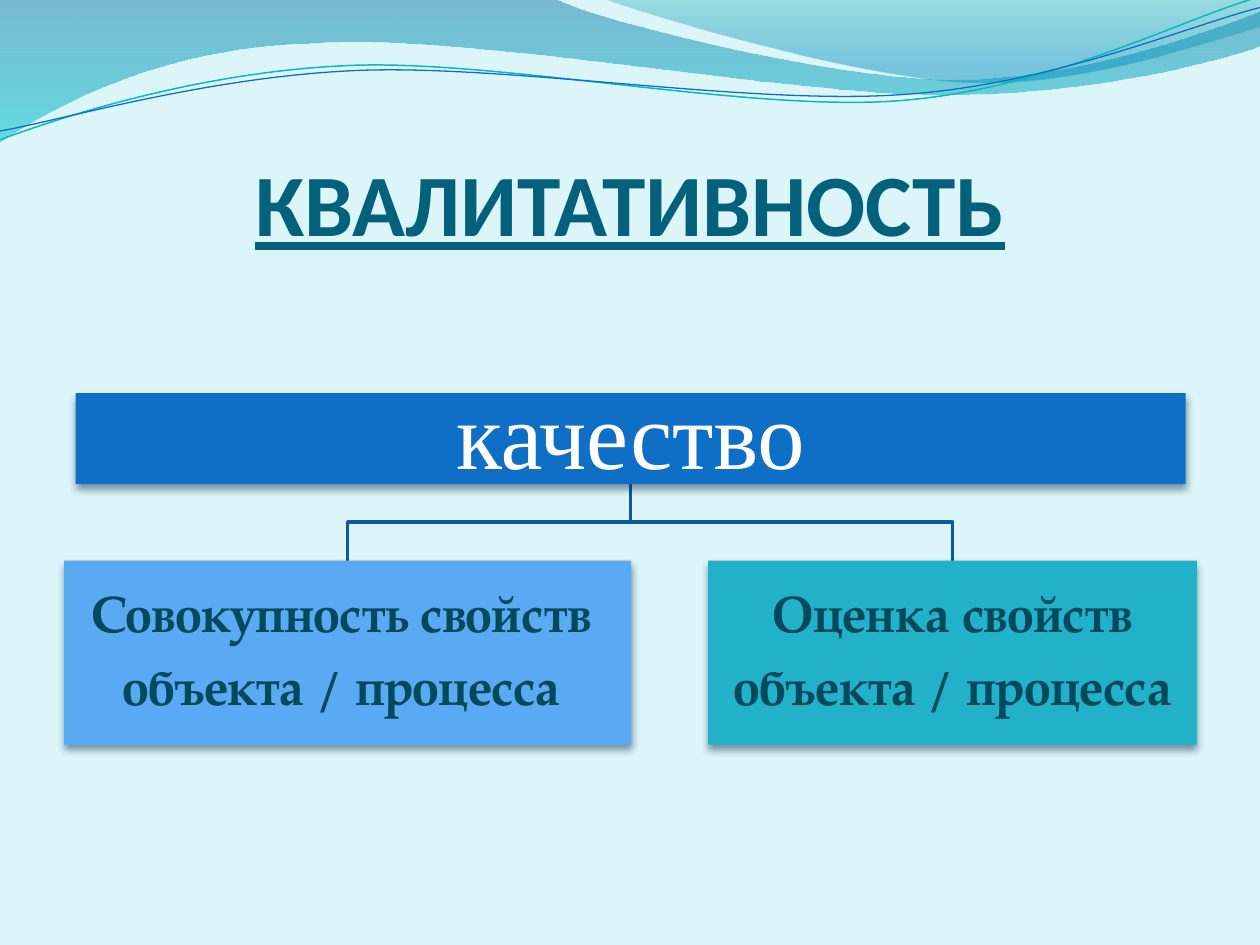
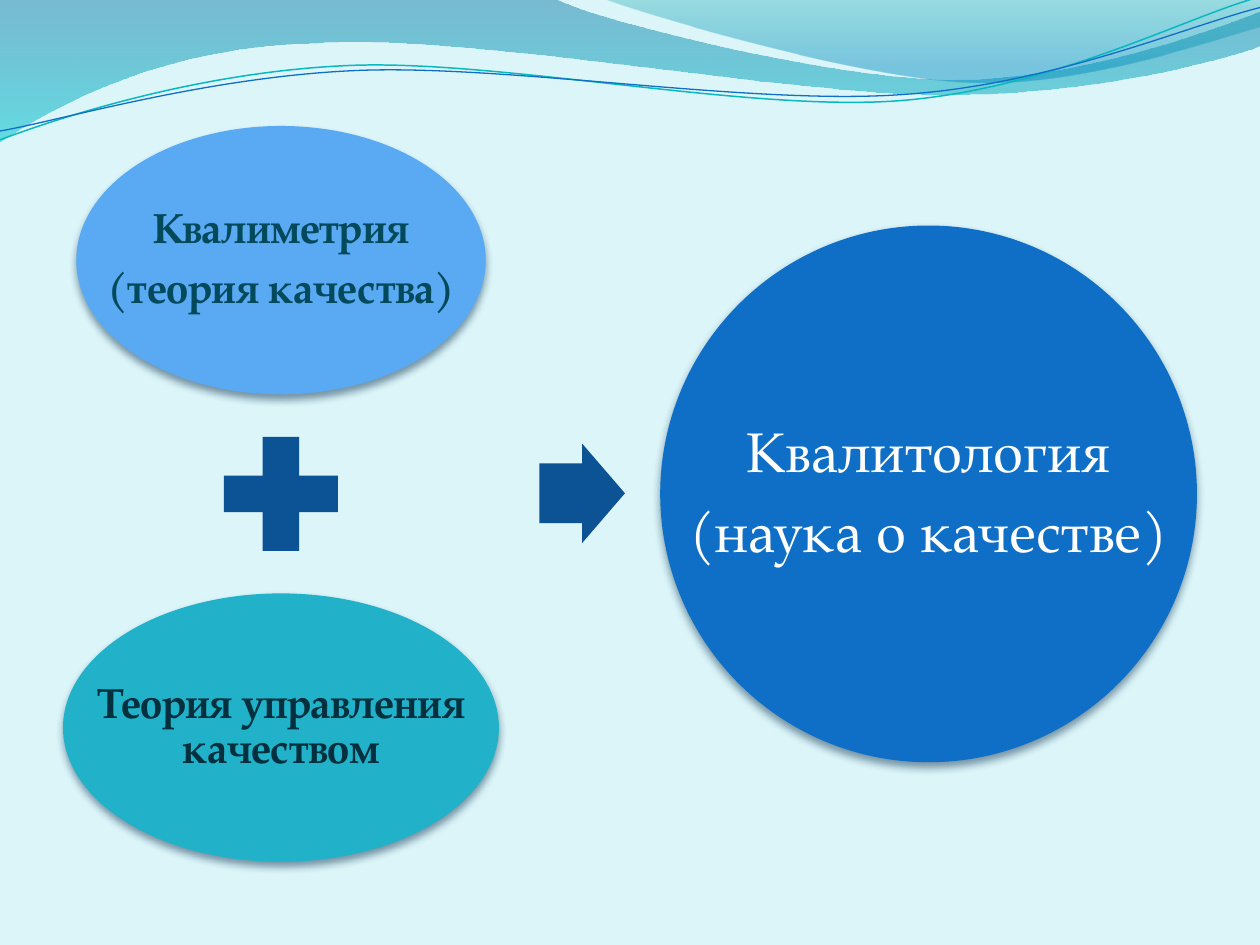
from math import cos, radians, sin

from lxml.etree import Element, SubElement
from pptx import Presentation
from pptx.dml.color import RGBColor
from pptx.enum.shapes import MSO_SHAPE as Shape
from pptx.enum.text import MSO_ANCHOR as Anchor, MSO_AUTO_SIZE as AutoSize, PP_ALIGN as Align
from pptx.oxml.ns import qn
from pptx.util import Inches, Pt

PAPER, WHITE = "DBF5F9", "FFFFFF"
BLUE, SKY, TEAL, NAVY = "0F6FC6", "59AAF2", "21B2C9", "0B5394"
TITLE_INK, INK, DARK_INK, TREE_LINE = "04617B", "03495C", "02303E", "0C599F"
SHADOW = "042747"
SERIF = "TeX Gyre Pagella"
CURVE_TILT = -2.7

# A wave is a start point followed by line ends (x, y) or cubic Bezier segments.
LEFT_BAND = [(0, 0), (4.4, -.01), (4.76, .17, 6.64, .63, 7.58, .63),
             (8.53, .63, 9.58, .26, 10, .09), (10.01, .36),
             (9.83, .44, 8.7, .76, 7.46, .75), (6.22, .75, 3.82, .28, 2.57, .34),
             (1.29, .36, .46, .83, -.01, 1.13)]
RIGHT_BAND = [(4.79, -.01), (5.09, .11, 6.82, .62, 7.69, .65),
              (8.56, .69, 9.61, .32, 10, .21), (10, 0)]
TEAL_CURVE = [(0, 1.11), (.48, .93, 1.58, .57, 2.77, .52),
              (3.95, .47, 5.93, .89, 7.13, .8), (8.33, .71, 9.38, .15, 9.98, -.02)]
BLUE_CURVE = [(0, 1.04), (.47, .96, 1.64, .61, 2.83, .56),
              (4.03, .51, 5.97, .84, 7.17, .75), (8.36, .67, 9.41, .21, 10, .06)]


def rgb(value):
    return RGBColor.from_string(value)


def box_inches(box):
    return [Inches(v) for v in box]


def add_outline(s, segments, close=False):
    """Freeform whose six-number segments become cubic Bezier curves."""
    (x, y), *ends = [(Inches(seg[-2]), Inches(seg[-1])) for seg in segments]
    builder = s.shapes.build_freeform(x, y)
    builder.add_line_segments(ends, close=close)
    sp = builder.convert_to_shape()
    sp.shadow.inherit = False
    for line, seg in zip(list(sp._element.iter(qn("a:lnTo"))), segments[1:]):
        if len(seg) == 6:
            line.tag = qn("a:cubicBezTo")
            for i in (0, 1):
                px, py = Inches(seg[2 * i]) - sp.left, Inches(seg[2 * i + 1]) - sp.top
                line.insert(i, Element(qn("a:pt"), x=str(px), y=str(py)))
    return sp


def add_line(s, segments, color, width):
    sp = add_outline(s, segments)
    sp.fill.background()
    sp.line.color.rgb = rgb(color)
    sp.line.width = Pt(width)
    return sp


def add_tilted_curve(s, segments, center, color, width):
    """Level the curve about its center, then tilt the finished shape back."""
    cx, cy = center
    c, n = cos(radians(-CURVE_TILT)), sin(radians(-CURVE_TILT))
    level = []
    for seg in segments:
        pairs = [(x - cx, y - cy) for x, y in zip(seg[::2], seg[1::2])]
        level.append([v for x, y in pairs for v in (cx + x * c - y * n, cy + x * n + y * c)])
    sp = add_line(s, level, color, width)
    sp.rotation = CURVE_TILT
    return sp


def add_band(s, segments, stops):
    """Closed wave with a top-to-bottom gradient of (position, colour, opacity)."""
    sp = add_outline(s, segments, close=True)
    sp.line.fill.background()
    sp.fill.gradient()
    sp.fill.gradient_angle = 270
    for stop, (position, color, _) in zip(sp.fill.gradient_stops, stops):
        stop.position = position
        stop.color.rgb = rgb(color)
    for clr, (_, _, opacity) in zip(sp._element.spPr.iter(qn("a:srgbClr")), stops):
        SubElement(clr, qn("a:alpha"), val=str(opacity * 1000))
    return sp


def move_waves_to_master(prs, s):
    """Draw the waves on a slide, then hand them to the master for every slide."""
    waves = [
        add_band(s, LEFT_BAND, [(0, "0074A1", 45), (1, "00C6CF", 55)]),
        add_band(s, RIGHT_BAND, [(0, "00A1A9", 30), (.8, "008BBF", 45)]),
        add_tilted_curve(s, TEAL_CURVE, (4.99, .57), "0AB8BF", .85),
        add_tilted_curve(s, BLUE_CURVE, (5, .59), BLUE, .75),
    ]
    tree = prs.slide_master.shapes.element
    for i, sp in enumerate(waves):
        sp._element.nvSpPr.cNvPr.id = 100 + i
        tree.insert(2 + i, sp._element)


def add_figure(s, kind, box, color):
    sp = s.shapes.add_shape(kind, *box_inches(box))
    sp.shadow.inherit = False
    sp.fill.solid()
    sp.fill.fore_color.rgb = rgb(color)
    sp.line.fill.background()
    return sp


def add_shadow(sp):
    effects = sp._element.spPr.find(qn("a:effectLst"))
    outer = SubElement(effects, qn("a:outerShdw"), blurRad=str(Pt(4.5)), dist=str(Pt(3)),
                       dir="5400000", rotWithShape="0")
    clr = SubElement(outer, qn("a:srgbClr"), val=SHADOW)
    SubElement(clr, qn("a:alpha"), val="48000")


def style_runs(p, size, font, color, bold):
    p.alignment = Align.CENTER
    for r in p.runs:
        r.font.size, r.font.name, r.font.bold = Pt(size), font, bold
        r.font.color.rgb = rgb(color)


def add_label(s, kind, box, fill, text, size, color=INK, font=SERIF, bold=True):
    """Shadowed shape under a text box that spans its full width."""
    add_shadow(add_figure(s, kind, box, fill))
    tf = s.shapes.add_textbox(*box_inches(box)).text_frame
    tf.text = text
    tf.word_wrap = True
    tf.vertical_anchor = Anchor.MIDDLE
    tf.margin_left = tf.margin_right = tf.margin_top = tf.margin_bottom = Inches(.03)
    for p in tf.paragraphs:
        p.line_spacing = .9
        p.space_after = Pt(.35 * size)
        style_runs(p, size, font, color, bold)


def set_title(s, text, box):
    title = s.shapes.title
    title.left, title.top, title.width, title.height = box_inches(box)
    tf = title.text_frame
    tf.text = text
    tf.auto_size = AutoSize.NONE
    tf.vertical_anchor = Anchor.BOTTOM
    tf.margin_left = tf.margin_right = tf.margin_bottom = 0
    p = tf.paragraphs[0]
    style_runs(p, 50, "Calibri", TITLE_INK, True)
    p.runs[0].font.underline = True


def add_quality_tree(s, box):
    x, y, w, h = box
    root_h, leaf_h = .72, 1.46
    root_bottom, leaf_top = y + root_h, y + h - leaf_h
    middle = (root_bottom + leaf_top) / 2
    center = x + w / 2
    leaves = [
        (x, 4.5, SKY, "Совокупность свойств \nобъекта / процесса "),
        (x + w - 3.88, 3.88, TEAL, "Оценка свойств\nобъекта / процесса"),
    ]
    for left, width, _, _ in reversed(leaves):
        leaf_x = left + width / 2
        add_line(s, [(center, root_bottom), (center, middle),
                     (leaf_x, middle), (leaf_x, leaf_top)], TREE_LINE, 2)
    add_label(s, Shape.RECTANGLE, (x + .09, y, w - .18, root_h), BLUE, "качество", 54,
              WHITE, "Times New Roman", False)
    for left, width, fill, text in leaves:
        add_label(s, Shape.RECTANGLE, (left, leaf_top, width, leaf_h), fill, text, 29)


def add_sum_diagram(s, box):
    """Two stacked ellipses joined by a plus, with an arrow to the resulting circle."""
    x, y, w, h = box
    term_w, term_h, plus, result = 3.46, 2.13, 1.23, 4.26
    center, middle = x + term_w / 2, y + h / 2
    add_label(s, Shape.OVAL, (center - 3.25 / 2, y, 3.25, term_h), SKY,
              "Квалиметрия\n(теория качества)", 24)
    add_figure(s, Shape.MATH_PLUS, (center - plus / 2, middle - plus / 2, plus, plus), NAVY)
    add_label(s, Shape.OVAL, (x, y + h - term_h, term_w, term_h), TEAL,
              "Теория управления качеством", 24, DARK_INK)
    arrow = add_figure(s, Shape.RIGHT_ARROW, (x + 3.78, middle - .4, .68, .79), NAVY)
    arrow.adjustments[0] = .6
    add_label(s, Shape.OVAL, (x + w - result, middle - result / 2, result, result), BLUE,
              "Квалитология\n(наука о качестве)", 32, WHITE, bold=False)


def main():
    prs = Presentation()
    prs.slide_width, prs.slide_height = Inches(10), Inches(7.5)
    background = prs.slide_master.background.fill
    background.solid()
    background.fore_color.rgb = rgb(PAPER)

    s = prs.slides.add_slide(prs.slide_layouts.get_by_name("Title Only"))
    move_waves_to_master(prs, s)
    set_title(s, "КВАЛИТАТИВНОСТЬ", (.5, .77, 9, 1.25))
    add_quality_tree(s, (.51, 3.12, 8.99, 2.79))

    s = prs.slides.add_slide(prs.slide_layouts.get_by_name("Blank"))
    add_sum_diagram(s, (.5, 1, 9, 5.84))

    prs.save("out.pptx")


if __name__ == "__main__":
    main()
